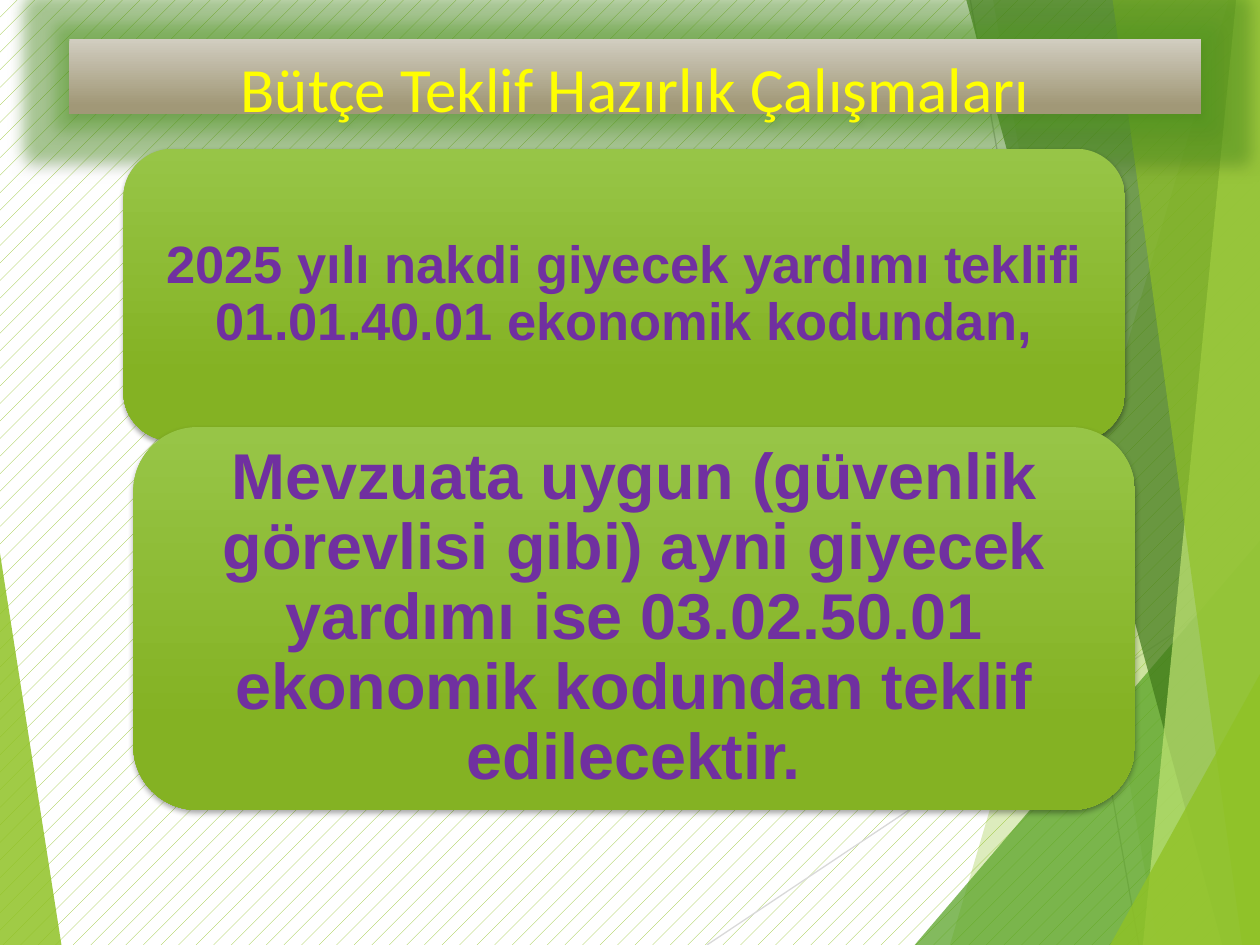
from lxml.etree import SubElement
from pptx import Presentation
from pptx.dml.color import RGBColor
from pptx.enum.dml import MSO_PATTERN
from pptx.enum.shapes import MSO_CONNECTOR, MSO_SHAPE
from pptx.enum.text import MSO_ANCHOR, PP_ALIGN
from pptx.oxml.ns import qn
from pptx.util import Cm, Pt

WHITE = RGBColor(0xFF, 0xFF, 0xFF)
BLACK = RGBColor(0x00, 0x00, 0x00)
YELLOW = RGBColor(0xFF, 0xFF, 0x00)
PURPLE = RGBColor(0x70, 0x30, 0xA0)
LIME = RGBColor(0x90, 0xC2, 0x26)
GREEN = RGBColor(0x54, 0xA0, 0x21)
FOREST = RGBColor(0x3F, 0x78, 0x19)
PALE = RGBColor(0xC0, 0xE4, 0x74)
SILVER = RGBColor(0xD9, 0xD9, 0xD9)
GREY = RGBColor(0xBF, 0xBF, 0xBF)
STONE = ((0, RGBColor(0xD1, 0xCD, 0xC0)), (0.88, RGBColor(0xA1, 0x98, 0x77)))
GRASS = ((0, RGBColor(0x97, 0xC5, 0x47)), (0.78, RGBColor(0x84, 0xB2, 0x23)))

WIDE, HIGH = 25.4, 19.05


def tint(node, color, alpha):
    """Add a colour with an opacity in percent."""
    tone = SubElement(node, qn("a:srgbClr"), val=str(color))
    SubElement(tone, qn("a:alpha"), val=str(alpha * 1000))


def effect(shape, tag, color, alpha, **attrs):
    """Append one effect to the shape's effect list."""
    shape.shadow.inherit = False
    chain = shape._element.spPr.find(qn("a:effectLst"))
    node = SubElement(chain, qn(tag), {k: str(v) for k, v in attrs.items()})
    tint(node, color, alpha)


def shade(shape, blur, drop, alpha):
    """Give the shape a soft shadow straight below it."""
    effect(shape, "a:outerShdw", BLACK, alpha, blurRad=Pt(blur),
           dist=Pt(drop), dir=5400000, rotWithShape=0)


def block(slide, kind, box, stops):
    """Add a preset shape with a gradient from top to bottom."""
    shape = slide.shapes.add_shape(kind, *(Cm(n) for n in box))
    shape.fill.gradient()
    shape.fill.gradient_angle = 270
    for stop, (place, color) in zip(shape.fill.gradient_stops, stops):
        stop.position = place
        stop.color.rgb = color
    shape.line.fill.background()
    shape.shadow.inherit = False
    return shape


def write(shape, text, *, size, font, color, bold=False, pad=(0.25, 0.13),
          anchor=MSO_ANCHOR.MIDDLE, lead=1.0):
    """Put centred text in the shape."""
    frame = shape.text_frame
    frame.word_wrap = True
    frame.vertical_anchor = anchor
    frame.margin_left = frame.margin_right = Cm(pad[0])
    frame.margin_top = frame.margin_bottom = Cm(pad[1])
    para = frame.paragraphs[0]
    para.alignment = PP_ALIGN.CENTER
    para.line_spacing = lead
    run = para.add_run()
    run.text = text
    run.font.size = Pt(size)
    run.font.name = font
    run.font.bold = bold
    run.font.color.rgb = color


def wedge(slide, points, color, alpha):
    """Draw a translucent polygon."""
    spots = [(Cm(x), Cm(y)) for x, y in points]
    maker = slide.shapes.build_freeform(*spots[0])
    maker.add_line_segments(spots[1:])
    shape = maker.convert_to_shape()
    shape.fill.solid()
    shape.fill.fore_color.rgb = color
    fill = shape._element.spPr.find(qn("a:solidFill"))
    fill.remove(fill[0])
    tint(fill, color, alpha)
    shape.line.fill.background()
    shape.shadow.inherit = False


def ray(slide, start, end, color):
    """Draw a thin straight line."""
    line = slide.shapes.add_connector(
        MSO_CONNECTOR.STRAIGHT, *(Cm(n) for n in start + end))
    line.line.color.rgb = color
    line.line.width = Pt(0.75)
    SubElement(line._element.spPr, qn("a:effectLst"))


def scene(slide, box):
    """Place the pattern, rays and wedges along the sides of the box."""
    left, top, wide, high = box
    right, base = left + wide, top + high
    fill = slide.background.fill
    fill.patterned()
    fill.pattern = MSO_PATTERN.PERCENT_5
    fill.fore_color.rgb = LIME
    fill.back_color.rgb = WHITE
    wedge(slide, [(left, top + 11.15), (left + 1.24, base), (left, base)],
          LIME, 85)
    ray(slide, (left + 14.25, base), (right, top + 11.6), SILVER)
    ray(slide, (left + 19.56, top), (left + 22.96, base), GREY)
    wings = (
        (24.77, 0, 19.15, LIME, 30),
        (20.02, 0, 23.34, LIME, 20),
        (WIDE, 10.9, 18.44, GREEN, 72),
        (19.48, 0, 24.64, FOREST, 70),
        (24.92, 0, 23.04, PALE, 70),
        (22.43, 0, 25.04, LIME, 65),
        (WIDE, 13.59, 22.38, LIME, 80),
    )
    for head, drop, foot, color, alpha in wings:
        wedge(slide, [(left + head, top + drop), (left + foot, base),
                      (right, base), (right, top + drop)], color, alpha)


def banner(slide, box, text):
    """Place the glowing title bar in the box."""
    bar = block(slide, MSO_SHAPE.RECTANGLE, box, STONE)
    effect(bar, "a:glow", GREEN, 40, rad=Pt(18))
    shade(bar, 3.5, 2.2, 32)
    write(bar, text, size=36, font="Calibri", color=YELLOW,
          pad=(0.25, 0.2), anchor=MSO_ANCHOR.TOP)


def card(slide, box, text, size, pad):
    """Place a rounded card with its statement in the box."""
    shape = block(slide, MSO_SHAPE.ROUNDED_RECTANGLE, box, GRASS)
    shade(shape, 3, 2, 35)
    write(shape, text, size=size, font="Arial", color=PURPLE, bold=True,
          pad=pad, lead=0.9)


def main():
    """Build and save the slide."""
    deck = Presentation()
    deck.slide_width, deck.slide_height = Cm(WIDE), Cm(HIGH)
    slide = deck.slides.add_slide(deck.slide_layouts[6])
    scene(slide, (0, 0, WIDE, HIGH))
    banner(slide, (1.4, 0.79, 22.81, 1.52),
           "Bütçe Teklif Hazırlık Çalışmaları")
    card(slide, (2.49, 3, 20.19, 5.89),
         "2025 yılı nakdi giyecek yardımı teklifi 01.01.40.01 "
         "ekonomik kodundan,", 30, (0.3, 0.15))
    card(slide, (2.69, 8.61, 20.19, 7.72),
         "Mevzuata uygun (güvenlik görevlisi gibi) ayni giyecek yardımı "
         "ise 03.02.50.01 ekonomik kodundan teklif edilecektir.",
         37, (0.38, 0.2))
    deck.save("out.pptx")


if __name__ == "__main__":
    main()
